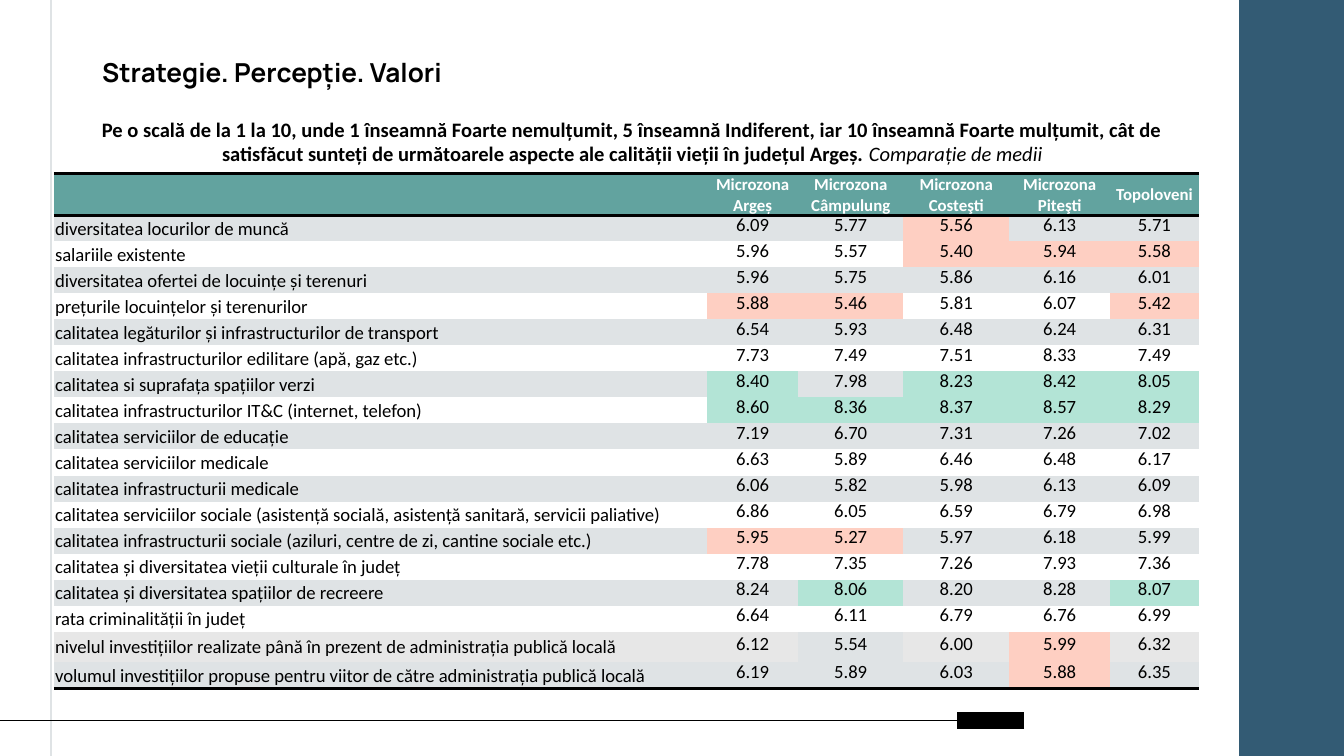
from dataclasses import dataclass

from lxml.etree import SubElement
from pptx import Presentation
from pptx.dml.color import RGBColor
from pptx.enum.shapes import MSO_CONNECTOR, MSO_SHAPE
from pptx.enum.text import MSO_ANCHOR, PP_ALIGN
from pptx.oxml.ns import qn
from pptx.util import Inches, Pt


@dataclass(frozen=True)
class Theme:
    black: str = "000000"
    white: str = "FFFFFF"
    band: str = "335B74"
    header: str = "62A39F"
    stripe: str = "DFE3E5"
    pale: str = "E7E7E7"
    low: str = "FECFC2"
    high: str = "B3E4D6"
    heading_font: str = "Manrope"
    body_font: str = "Calibri"
    title_size: int = 14
    question_size: int = 11
    header_size: int = 9
    cell_size: int = 10


THEME = Theme()
SLIDE_WIDTH = 10
SLIDE_HEIGHT = SLIDE_WIDTH * 9 / 16
NO_GRID_STYLE = "{2D5ABB26-0587-4C30-8999-92F81FD0307C}"
COLUMN_WIDTHS = [4.86, 0.68, 0.78, 0.79, 0.75, 0.66]
HEADER_HEIGHT, ROW_HEIGHT = 0.31, 0.19
ZONES = ["Microzona Argeș", "Microzona Câmpulung", "Microzona Costeşti",
         "Microzona Piteşti", "Topoloveni"]
# How many of the lowest and highest means are highlighted in each zone
LOW_COUNTS = [2, 2, 2, 3, 2]
HIGH_COUNTS = [2, 2, 2, 2, 3]
RATINGS = [
    ("diversitatea locurilor de muncă", 6.09, 5.77, 5.56, 6.13, 5.71),
    ("salariile existente", 5.96, 5.57, 5.40, 5.94, 5.58),
    ("diversitatea ofertei de locuințe și terenuri", 5.96, 5.75, 5.86, 6.16, 6.01),
    ("prețurile locuințelor și terenurilor", 5.88, 5.46, 5.81, 6.07, 5.42),
    ("calitatea legăturilor și infrastructurilor de transport", 6.54, 5.93, 6.48, 6.24, 6.31),
    ("calitatea infrastructurilor edilitare (apă, gaz etc.)", 7.73, 7.49, 7.51, 8.33, 7.49),
    ("calitatea si suprafața spațiilor verzi", 8.40, 7.98, 8.23, 8.42, 8.05),
    ("calitatea infrastructurilor IT&C (internet, telefon)", 8.60, 8.36, 8.37, 8.57, 8.29),
    ("calitatea serviciilor de educație", 7.19, 6.70, 7.31, 7.26, 7.02),
    ("calitatea serviciilor medicale", 6.63, 5.89, 6.46, 6.48, 6.17),
    ("calitatea infrastructurii medicale", 6.06, 5.82, 5.98, 6.13, 6.09),
    ("calitatea serviciilor sociale (asistență socială, asistență sanitară, servicii paliative)",
     6.86, 6.05, 6.59, 6.79, 6.98),
    ("calitatea infrastructurii sociale (aziluri, centre de zi, cantine sociale etc.)",
     5.95, 5.27, 5.97, 6.18, 5.99),
    ("calitatea și diversitatea vieții culturale în județ", 7.78, 7.35, 7.26, 7.93, 7.36),
    ("calitatea și diversitatea spațiilor de recreere", 8.24, 8.06, 8.20, 8.28, 8.07),
    ("rata criminalității în județ", 6.64, 6.11, 6.79, 6.76, 6.99),
    ("nivelul investițiilor realizate până în prezent de administrația publică locală",
     6.12, 5.54, 6.00, 5.99, 6.32),
    ("volumul investițiilor propuse pentru viitor de către administrația publică locală",
     6.19, 5.89, 6.03, 5.88, 6.35),
]
PALE_ROW = 16
QUESTION = ("Pe o scală de la 1 la 10, unde 1 înseamnă Foarte nemulțumit, 5 înseamnă "
            "Indiferent, iar 10 înseamnă Foarte mulțumit, cât de satisfăcut sunteți de "
            "următoarele aspecte ale calității vieții în județul Argeș. ")


def set_attributes(target, values):
    for name, value in values.items():
        setattr(target, name, value)


def add_run(p, text, size, color=THEME.black, font=THEME.body_font, **style):
    r = p.add_run()
    r.text = text
    set_attributes(r.font, {"name": font, "size": Pt(size), **style})
    r.font.color.rgb = RGBColor.from_string(color)


def add_band(s, left, top, width, height, color):
    sp = s.shapes.add_shape(MSO_SHAPE.RECTANGLE, Inches(left), Inches(top),
                            Inches(width), Inches(height))
    sp.shadow.inherit = False
    sp.fill.solid()
    sp.fill.fore_color.rgb = RGBColor.from_string(color)
    sp.line.fill.background()


def add_line(s, x1, y1, x2, y2, color, width):
    line = s.shapes.add_connector(MSO_CONNECTOR.STRAIGHT, Inches(x1), Inches(y1),
                                  Inches(x2), Inches(y2))
    line.line.color.rgb = RGBColor.from_string(color)
    line.line.width = Pt(width)
    SubElement(line._element.spPr, qn("a:effectLst"))


def add_title(s, text):
    sp = s.shapes.title
    set_attributes(sp, {"left": Inches(0.66), "top": Inches(0.32),
                        "width": Inches(8.43), "height": Inches(0.4)})
    tf = sp.text_frame
    margins = ("margin_left", "margin_top", "margin_right", "margin_bottom")
    set_attributes(tf, dict.fromkeys(margins, Inches(0.1)))
    tf.vertical_anchor = MSO_ANCHOR.TOP
    p = tf.paragraphs[0]
    p.alignment = PP_ALIGN.LEFT
    add_run(p, text, THEME.title_size, font=THEME.heading_font, bold=True)


def add_question(s):
    sp = s.shapes.add_textbox(Inches(0.45), Inches(0.82), Inches(8.51), Inches(0.47))
    tf = sp.text_frame
    tf.word_wrap = True
    p = tf.paragraphs[0]
    p.alignment = PP_ALIGN.CENTER
    add_run(p, QUESTION, THEME.question_size, bold=True)
    add_run(p, "Comparație de medii", THEME.question_size, italic=True)


def add_border(cell, side):
    ln = SubElement(cell._tc.get_or_add_tcPr(), qn(f"a:ln{side}"), w=str(Pt(2)))
    fill = SubElement(ln, qn("a:solidFill"))
    SubElement(fill, qn("a:srgbClr"), val=THEME.black)


def fill_cell(cell, text, fill, size, color=THEME.black, align=PP_ALIGN.CENTER,
              spacing=None, bottom=0, borders="", bold=False):
    for side in borders:
        add_border(cell, side)
    cell.fill.solid()
    cell.fill.fore_color.rgb = RGBColor.from_string(fill)
    edge = Inches(0.01)
    set_attributes(cell, {"margin_left": edge, "margin_right": edge, "margin_top": edge,
                          "margin_bottom": Inches(bottom),
                          "vertical_anchor": MSO_ANCHOR.MIDDLE})
    p = cell.text_frame.paragraphs[0]
    set_attributes(p, {"alignment": align, "line_spacing": spacing})
    if text:
        add_run(p, text, size, color, bold=bold)
    else:
        SubElement(p._p, qn("a:endParaRPr"), sz=str(size * 100))


def row_fill(row):
    if row == PALE_ROW:
        return THEME.pale
    return THEME.white if row % 2 and row < PALE_ROW else THEME.stripe


def value_fill(row, zone):
    """Highlight the extreme means of a zone, else keep the row colour."""
    ranked = sorted(rating[zone + 1] for rating in RATINGS)
    value = RATINGS[row][zone + 1]
    if value <= ranked[LOW_COUNTS[zone] - 1]:
        return THEME.low
    if value >= ranked[-HIGH_COUNTS[zone]]:
        return THEME.high
    return THEME.stripe if (row, zone) == (PALE_ROW, 1) else row_fill(row)


def add_ratings_table(s):
    heights = [HEADER_HEIGHT] + [ROW_HEIGHT] * len(RATINGS)
    frame = s.shapes.add_table(len(heights), len(COLUMN_WIDTHS), Inches(0.4), Inches(1.29),
                               Inches(sum(COLUMN_WIDTHS)), Inches(sum(heights)))
    table = frame.table
    table.horz_banding = table.first_row = False
    table._tbl.tblPr.find(qn("a:tableStyleId")).text = NO_GRID_STYLE
    for column, width in zip(table.columns, COLUMN_WIDTHS):
        column.width = Inches(width)
    for row, height in zip(table.rows, heights):
        row.height = Inches(height)

    for col, text in enumerate(["", *ZONES]):
        fill_cell(table.cell(0, col), text, THEME.header, THEME.header_size, THEME.white,
                  borders="TB", bold=True)
    for row, (label, *values) in enumerate(RATINGS):
        borders = "B" if row == len(RATINGS) - 1 else ""
        fill_cell(table.cell(row + 1, 0), label, row_fill(row), THEME.cell_size,
                  align=PP_ALIGN.LEFT, borders=borders)
        for zone, value in enumerate(values):
            fill_cell(table.cell(row + 1, zone + 1), f"{value:.2f}", value_fill(row, zone),
                      THEME.cell_size, spacing=None if row == PALE_ROW else 0.8,
                      bottom=0.05, borders=borders)


def main():
    prs = Presentation()
    prs.slide_width, prs.slide_height = Inches(SLIDE_WIDTH), Inches(SLIDE_HEIGHT)
    s = prs.slides.add_slide(prs.slide_layouts[5])
    add_band(s, 9.22, 0, 0.78, SLIDE_HEIGHT, THEME.band)
    add_line(s, 0.38, -0.04, 0.38, 5.66, THEME.stripe, 0.75)
    add_line(s, 7.62, 5.36, 7.12, 5.36, THEME.black, 9)
    add_line(s, 7.12, 5.36, -0.09, 5.36, THEME.black, 0.75)
    add_title(s, "Strategie. Percepție. Valori")
    add_question(s)
    add_ratings_table(s)
    prs.save("out.pptx")


if __name__ == "__main__":
    main()
